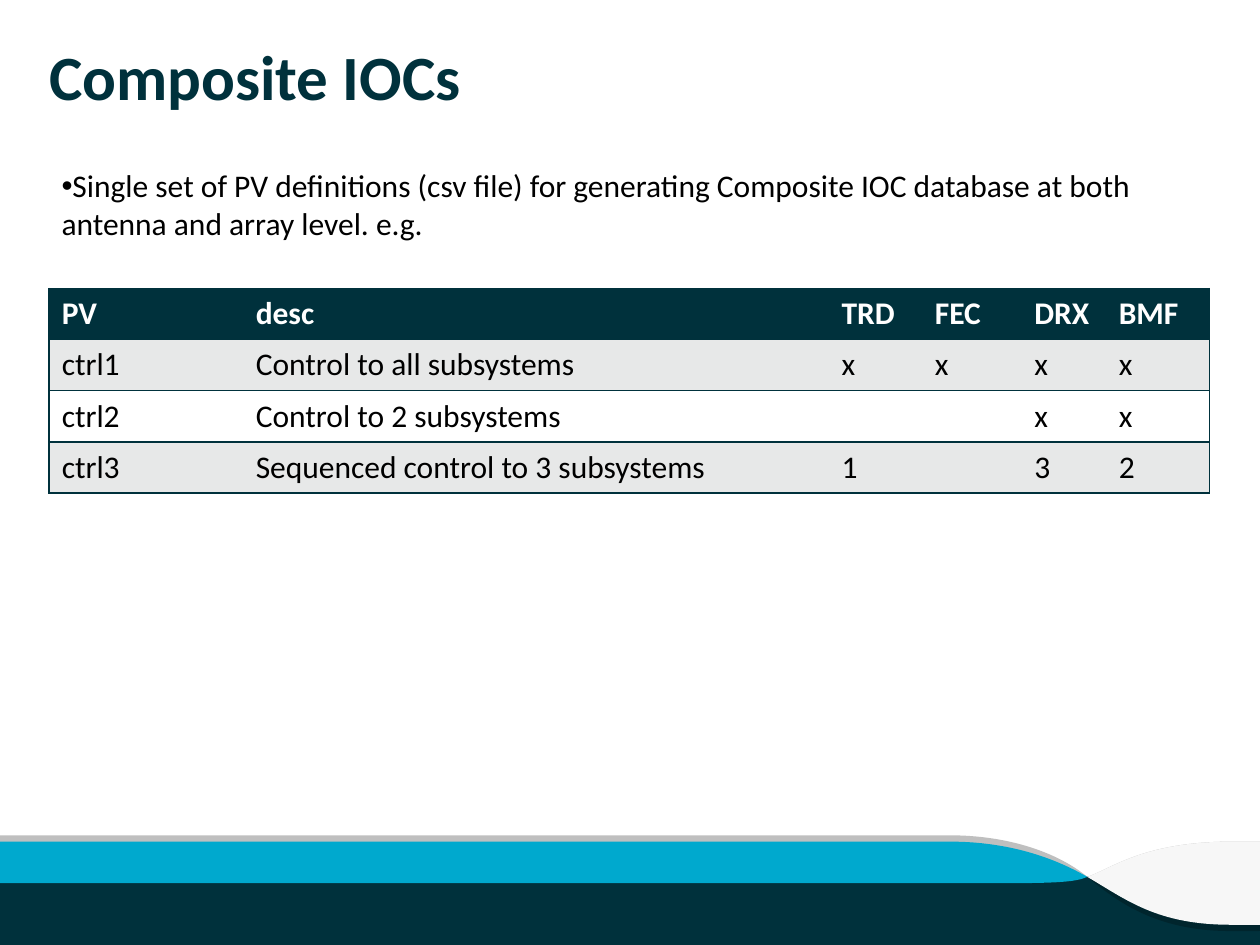
from pptx import Presentation
from pptx.dml.color import RGBColor as Rgb
from pptx.enum.shapes import MSO_SHAPE as Shape
from pptx.enum.text import MSO_ANCHOR as Anchor, MSO_AUTO_SIZE as AutoSize, PP_ALIGN as Align
from pptx.oxml.ns import qn
from pptx.util import Emu, Pt
from lxml.etree import SubElement, Element

TITLE = "Composite IOCs"
SUMMARY = (
    "Single set of PV definitions (csv file) for generating Composite IOC "
    "database at both antenna and array level. e.g."
)
PV_ROWS = [
    ("PV", "desc", "TRD", "FEC", "DRX", "BMF"),
    ("ctrl1", "Control to all subsystems", "x", "x", "x", "x"),
    ("ctrl2", "Control to 2 subsystems", "", "", "x", "x"),
    ("ctrl3", "Sequenced control to 3 subsystems", "1", "", "3", "2"),
]

THEME = {
    "font": "Calibri",
    "bullet_font": "Arial",
    "title_size": 36,
    "body_size": 18,
    "navy": "00313C",
    "shade": "00252D",
    "blue": "00A9CE",
    "silver": "BFBFBF",
    "mist": "F7F7F7",
    "band": "E7E8E8",
    "white": "FFFFFF",
    "black": "000000",
}

PX_PER_INCH = 100
SLIDE_SIZE = (1000, 750)
TITLE_BOX = (39, 30, 925, 93)
SUMMARY_BOX = (39, 127, 917, 71)
TABLE_LEFT, TABLE_TOP, TABLE_HEIGHT = 39, 229, 162
COLUMN_WIDTHS = (154, 465, 74, 79, 67, 82)
FOOTER_BOX = (0, 696, 1000, 54)

WAVES = [
    ("silver", [
        [(1000, 668), (978, 668), (908, 668, 883, 689, 863, 696),
         (1000, 696), (1000, 739)],
        [(754, 663), (0, 663), (0, 696), (863, 696),
         (840, 677, 801, 663, 754, 663)],
    ]),
    ("shade", [
        [(863, 696), (0, 696), (0, 701), (795, 701),
         (840, 701, 854, 700, 863, 696)],
        [(1000, 696), (863, 696), (887, 716, 918, 739, 977, 739), (1000, 739)],
    ]),
    ("blue", [
        [(863, 696), (837, 681, 801, 668, 754, 668), (0, 668), (0, 701),
         (795, 701), (840, 701, 854, 700, 863, 696)],
    ]),
    ("mist", [
        [(978, 668), (908, 668, 883, 689, 863, 696),
         (894, 714, 918, 734, 977, 734), (1000, 734), (1000, 668)],
    ]),
]


def px(length):
    return Emu(round(length * 914400 / PX_PER_INCH))


def color(name):
    return Rgb.from_string(THEME[name])


def assign(target, values):
    for name, value in values.items():
        setattr(target, name, value)


def style_text(paragraph, size, ink, bold=False):
    for run in paragraph.runs:
        assign(run.font, {"name": THEME["font"], "size": Pt(THEME[size]), "bold": bold})
        run.font.color.rgb = color(ink)


def paint(shape, fill):
    shape.shadow.inherit = False
    shape.fill.solid()
    shape.fill.fore_color.rgb = color(fill)
    shape.line.fill.background()


def bend(wave, contours):
    segments = [segment for contour in contours for segment in contour[1:]]
    edges = list(wave._element.iter(qn("a:lnTo")))
    for edge, segment in zip(edges, segments):
        if len(segment) == 2:
            continue
        edge.tag = qn("a:cubicBezTo")
        controls = zip(segment[:4:2], segment[1:4:2])
        for position, (x, y) in enumerate(controls):
            point = Element(qn("a:pt"), x=str(px(x) - wave.left), y=str(px(y) - wave.top))
            edge.insert(position, point)


def draw_footer(slide):
    paint(slide.shapes.add_shape(Shape.RECTANGLE, *map(px, FOOTER_BOX)), "navy")
    for fill, contours in WAVES:
        first, *others = [
            [tuple(map(px, segment[-2:])) for segment in contour] for contour in contours
        ]
        outline = slide.shapes.build_freeform(*first[0])
        outline.add_line_segments(first[1:])
        for contour in others:
            outline.move_to(*contour[0])
            outline.add_line_segments(contour[1:])
        wave = outline.convert_to_shape()
        bend(wave, contours)
        paint(wave, fill)


def draw_title(slide):
    title = slide.shapes.title
    assign(title, dict(zip(("left", "top", "width", "height"), map(px, TITLE_BOX))))
    frame = title.text_frame
    frame.text = TITLE
    assign(frame, {
        "margin_left": 0, "margin_top": 0, "margin_right": 0, "margin_bottom": 0,
        "vertical_anchor": Anchor.TOP, "word_wrap": True, "auto_size": AutoSize.NONE,
    })
    heading = frame.paragraphs[0]
    heading.alignment = Align.LEFT
    style_text(heading, "title_size", "navy", bold=True)


def draw_summary(slide):
    frame = slide.shapes.add_textbox(*map(px, SUMMARY_BOX)).text_frame
    assign(frame, {"word_wrap": True, "auto_size": AutoSize.SHAPE_TO_FIT_TEXT})
    frame.text = SUMMARY
    bullet = frame.paragraphs[0]
    properties = bullet._p.get_or_add_pPr()
    SubElement(properties, qn("a:buFont"), typeface=THEME["bullet_font"])
    SubElement(properties, qn("a:buChar"), char="•")
    style_text(bullet, "body_size", "black")


def set_borders(cell, visible):
    properties = cell._tc.get_or_add_tcPr()
    for position, side in enumerate("LRTB"):
        border = Element(qn(f"a:ln{side}"), w=str(Pt(1)))
        if side in visible:
            fill = SubElement(border, qn("a:solidFill"))
            SubElement(fill, qn("a:srgbClr"), val=THEME["navy"])
        else:
            SubElement(border, qn("a:noFill"))
        properties.insert(position, border)


def draw_table(slide):
    box = (TABLE_LEFT, TABLE_TOP, sum(COLUMN_WIDTHS), TABLE_HEIGHT)
    table = slide.shapes.add_table(len(PV_ROWS), len(COLUMN_WIDTHS), *map(px, box)).table
    for column, width in zip(table.columns, COLUMN_WIDTHS):
        column.width = px(width)
    last = len(COLUMN_WIDTHS) - 1
    for row_number, entries in enumerate(PV_ROWS):
        header = row_number == 0
        fill = "navy" if header else ("white", "band")[row_number % 2]
        for column_number, entry in enumerate(entries):
            cell = table.cell(row_number, column_number)
            cell.text = entry
            style_text(cell.text_frame.paragraphs[0], "body_size",
                       "white" if header else "black", header)
            cell.fill.solid()
            cell.fill.fore_color.rgb = color(fill)
            set_borders(cell, "TB" + "L" * (column_number == 0) + "R" * (column_number == last))


def main():
    deck = Presentation()
    deck.slide_width, deck.slide_height = map(px, SLIDE_SIZE)
    slide = deck.slides.add_slide(deck.slide_layouts[5])
    draw_footer(slide)
    draw_title(slide)
    draw_table(slide)
    draw_summary(slide)
    deck.save("out.pptx")


if __name__ == "__main__":
    main()
